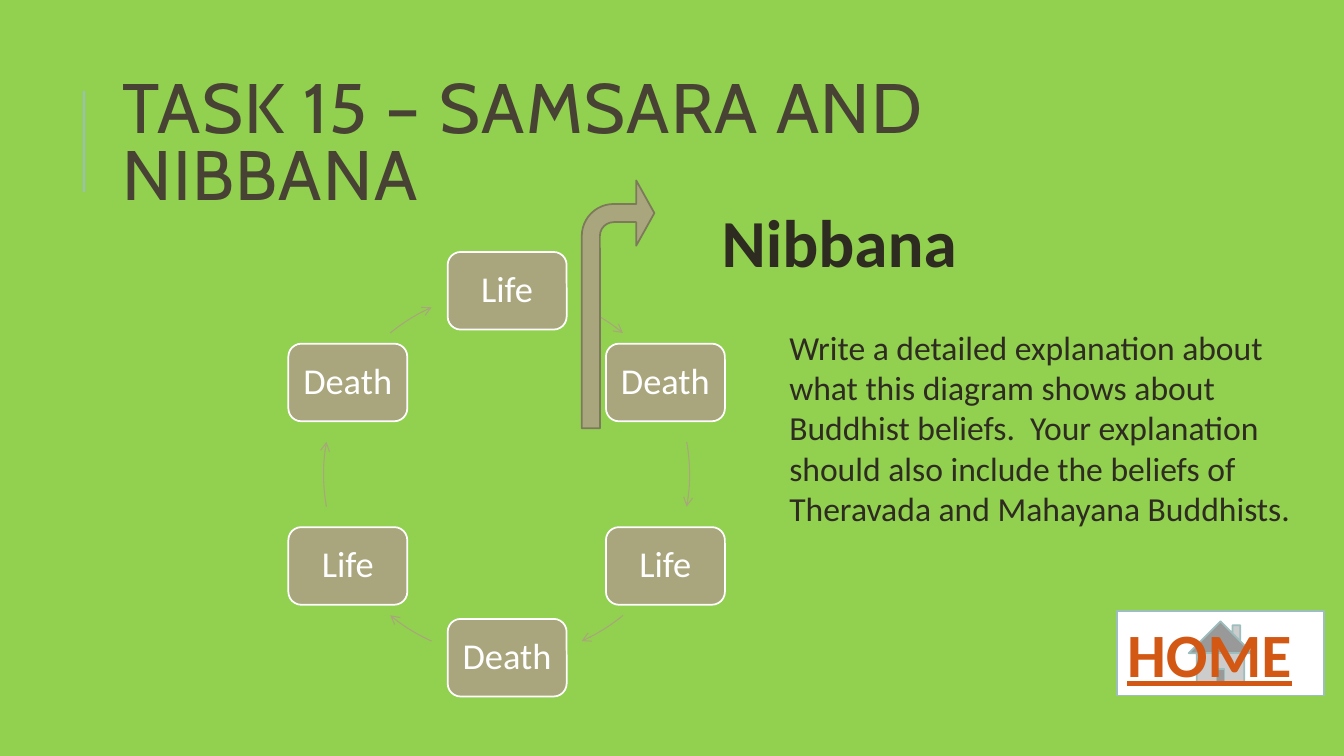
from dataclasses import dataclass
import math

import pptx
import pptx.enum.shapes
import pptx.oxml
import pptx.oxml.ns
import pptx.util
from pptx.dml.color import RGBColor
from pptx.enum.shapes import MSO_SHAPE
from pptx.enum.text import MSO_ANCHOR, MSO_AUTO_SIZE, PP_ALIGN

EMU_PER_PX = 9144

GREEN = RGBColor(0x92, 0xD0, 0x50)
PALE_TEAL = RGBColor(0x9C, 0xBE, 0xBD)
KHAKI = RGBColor(0xA9, 0xA5, 0x7C)
DARK_KHAKI = RGBColor(0x7D, 0x7A, 0x5C)
BROWN = RGBColor(0x47, 0x42, 0x33)
INK = RGBColor(0x2E, 0x2B, 0x21)
ORANGE = RGBColor(0xD2, 0x58, 0x14)
WHITE = RGBColor(0xFF, 0xFF, 0xFF)

RING_LEFT, RING_TOP, RING_SIZE = 321, 289, 363
STAGE_WIDTH, STAGE_HEIGHT = 118, 77
STAGES = ("Life", "Death") * 3
STEP = 360 / len(STAGES)


@dataclass(frozen=True)
class Box:
    left: int
    top: int
    width: int
    height: int

    def emu(self) -> tuple[int, ...]:
        return tuple(side * EMU_PER_PX for side in (self.left, self.top, self.width, self.height))


@dataclass(frozen=True)
class Style:
    size: int
    color: RGBColor
    font: str = "Calibri"
    bold: bool = False
    underline: bool = False


@dataclass(frozen=True)
class Label:
    box: Box
    text: str
    style: Style
    wrap: bool = True


@dataclass(frozen=True)
class Arc:
    start: float
    end: float


ARCS = (
    Arc(24.2, 39.5),
    Arc(79.8, 100.2),
    Arc(140.5, 155.8),
    Arc(204.2, 219.5),
    Arc(259.8, 280.2),
    Arc(320.5, 335.8),
)
LABELS = (
    Label(Box(706, 194, 262, 91), "Nibbana", Style(48, INK, bold=True), wrap=False),
    Label(
        Box(773, 319, 546, 212),
        "Write a detailed explanation about what this diagram shows about Buddhist "
        "beliefs.  Your explanation should also include the beliefs of Theravada "
        "and Mahayana Buddhists.",
        Style(24, INK),
    ),
)


def make_element(tag: str, attributes: str = "", content: str = ""):
    namespace = pptx.oxml.ns.nsdecls("a")
    return pptx.oxml.parse_xml(f"<a:{tag} {namespace} {attributes}>{content}</a:{tag}>")


def write(shape, text: str, style: Style, align=PP_ALIGN.LEFT):
    text_frame = shape.text_frame
    text_frame.text = text
    text_frame.word_wrap = True
    paragraph = text_frame.paragraphs[0]
    paragraph.alignment = align
    font = paragraph.runs[0].font
    font.name = style.font
    font.size = pptx.util.Pt(style.size)
    font.bold = style.bold
    font.underline = style.underline
    font.color.rgb = style.color
    return paragraph


def add_shape(slide, kind: MSO_SHAPE, box: Box, fill: RGBColor | None, line: RGBColor, width=1.25):
    shape = slide.shapes.add_shape(kind, *box.emu())
    shape.shadow.inherit = False
    if fill is None:
        shape.fill.background()
    else:
        shape.fill.solid()
        shape.fill.fore_color.rgb = fill
    shape.line.color.rgb = line
    shape.line.width = pptx.util.Pt(width)
    return shape


def add_title(slide) -> None:
    title = slide.shapes.add_textbox(*Box(112, 64, 1063, 164).emu())
    title.text_frame.vertical_anchor = MSO_ANCHOR.MIDDLE
    paragraph = write(title, "TASK 15 – SAMSARA AND NIBBANA", Style(50, BROWN, "Cabin"))
    paragraph.line_spacing = 0.8
    paragraph.runs[0]._r.get_or_add_rPr().set("spc", "100")


def add_side_rule(slide) -> None:
    ends = (side * EMU_PER_PX for side in (83, 190, 83, 90))
    rule = slide.shapes.add_connector(pptx.enum.shapes.MSO_CONNECTOR.STRAIGHT, *ends)
    rule.line.color.rgb = PALE_TEAL
    rule.line.width = pptx.util.Pt(1.5)
    rule._element.spPr.append(make_element("effectLst"))


def add_home_button(slide) -> None:
    box = Box(1108, 606, 205, 84)
    button = add_shape(slide, MSO_SHAPE.ACTION_BUTTON_HOME, box, WHITE, PALE_TEAL)
    button.text_frame.vertical_anchor = MSO_ANCHOR.TOP
    paragraph = write(button, "HOME", Style(44, ORANGE, bold=True, underline=True))
    fill = f'<a:solidFill><a:srgbClr val="{PALE_TEAL}"/></a:solidFill>'
    outline = make_element("ln", 'w="22225"', fill)
    paragraph.runs[0]._r.get_or_add_rPr().insert(0, outline)


def add_stage(slide, name: str, angle: float) -> None:
    radius = RING_SIZE / 2
    center_x = RING_LEFT + radius + radius * math.sin(math.radians(angle))
    center_y = RING_TOP + radius - radius * math.cos(math.radians(angle))
    left = round(center_x - STAGE_WIDTH / 2)
    top = round(center_y - STAGE_HEIGHT / 2)
    box = Box(left, top, STAGE_WIDTH, STAGE_HEIGHT)
    stage = add_shape(slide, MSO_SHAPE.ROUNDED_RECTANGLE, box, KHAKI, WHITE)
    text_frame = stage.text_frame
    text_frame.vertical_anchor = MSO_ANCHOR.MIDDLE
    text_frame.margin_left = text_frame.margin_right = 11 * EMU_PER_PX
    text_frame.margin_top = text_frame.margin_bottom = 11 * EMU_PER_PX
    write(stage, name, Style(26, WHITE), PP_ALIGN.CENTER).line_spacing = 0.9


def add_arc(slide, arc: Arc) -> None:
    box = Box(RING_LEFT, RING_TOP, RING_SIZE, RING_SIZE)
    shape = add_shape(slide, MSO_SHAPE.ARC, box, None, KHAKI, 0.75)
    for index, angle in enumerate((arc.start, arc.end)):
        shape.adjustments[index] = (angle - 90) % 360 * 0.6
    shape._element.spPr.get_or_add_ln().append(make_element("tailEnd", 'type="arrow"'))


def add_escape_arrow(slide) -> None:
    arrow = add_shape(slide, MSO_SHAPE.BENT_ARROW, Box(577, 179, 72, 246), KHAKI, DARK_KHAKI)
    for index, value in enumerate((0.25, 0.45, 0.25, 0.44)):
        arrow.adjustments[index] = value


def add_label(slide, label: Label) -> None:
    shape = slide.shapes.add_textbox(*label.box.emu())
    write(shape, label.text, label.style)
    shape.text_frame.word_wrap = label.wrap
    shape.text_frame.auto_size = MSO_AUTO_SIZE.SHAPE_TO_FIT_TEXT


def main() -> None:
    presentation = pptx.Presentation()
    presentation.slide_width = 1333 * EMU_PER_PX
    presentation.slide_height = 750 * EMU_PER_PX
    slide = presentation.slides.add_slide(presentation.slide_layouts[6])
    slide.background.fill.solid()
    slide.background.fill.fore_color.rgb = GREEN

    add_side_rule(slide)
    add_home_button(slide)
    add_title(slide)
    for index, (name, arc) in enumerate(zip(STAGES, ARCS)):
        add_stage(slide, name, index * STEP)
        add_arc(slide, arc)
    add_escape_arrow(slide)
    for label in LABELS:
        add_label(slide, label)
    presentation.save("out.pptx")


if __name__ == "__main__":
    main()
